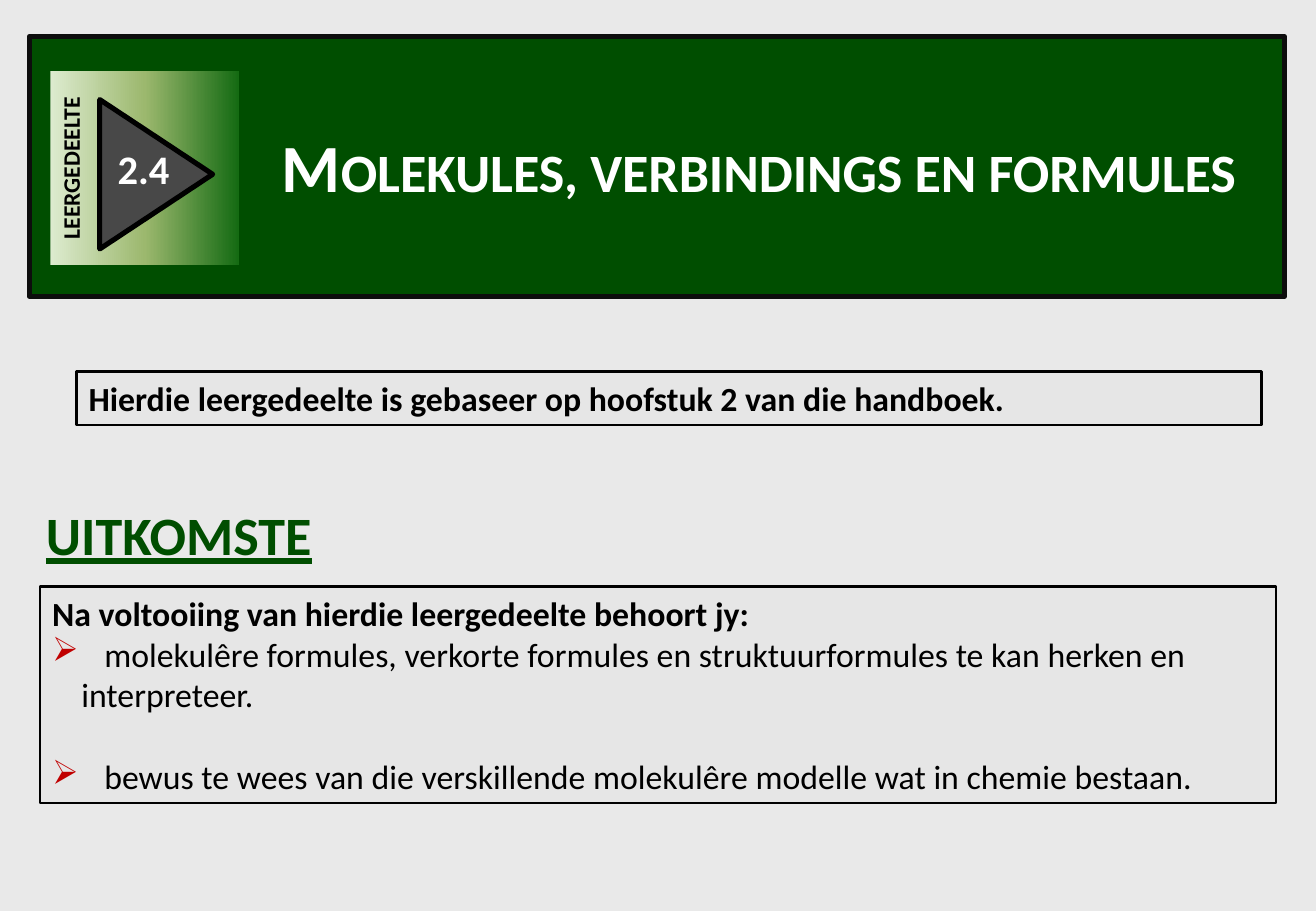
"""Build the opening slide of study section 2.4 on molecules and formulas."""
from copy import deepcopy

from lxml import etree
from pptx import Presentation
from pptx import util as u
from pptx.dml.color import RGBColor
from pptx.enum import shapes, text
from pptx.oxml.ns import qn

WIDTH, HEIGHT = u.Inches(10.83), u.Inches(7.5)
FONT = "Calibri"
BACKGROUND = RGBColor(0xE9, 0xE9, 0xE9)
PANEL = RGBColor(0xE6, 0xE6, 0xE6)
GREEN = RGBColor(0x00, 0x4E, 0x00)
BLACK = RGBColor(0x00, 0x00, 0x00)
BORDER = RGBColor(0x0D, 0x0D, 0x0D)
WHITE = RGBColor(0xFF, 0xFF, 0xFF)
GREY = RGBColor(0x48, 0x48, 0x48)
RED = RGBColor(0xC0, 0x00, 0x00)
TAG_STOPS = [
    (0, RGBColor(0xDD, 0xEB, 0xCF)),
    (0.5, RGBColor(0x9C, 0xB8, 0x6E)),
    (1, RGBColor(0x15, 0x6B, 0x13)),
]
LEFT, CENTER = text.PP_ALIGN.LEFT, text.PP_ALIGN.CENTER
TOP, MIDDLE = text.MSO_ANCHOR.TOP, text.MSO_ANCHOR.MIDDLE
INDENT, TAB_STOP = u.Inches(0.24), u.Inches(0.43)


def place(left, top, width, height):
    """Turn percentages of the slide's size into lengths."""
    return (int(WIDTH * left / 100), int(HEIGHT * top / 100),
            int(WIDTH * width / 100), int(HEIGHT * height / 100))


def add_box(slide, kind, area, fill=None, line=None, line_width=0):
    """Add a flat preset shape with an optional solid fill and outline."""
    shape = slide.shapes.add_shape(kind, *place(*area))
    shape.shadow.inherit = False
    if fill is not None:
        shape.fill.solid()
        shape.fill.fore_color.rgb = fill
    if line is None:
        shape.line.fill.background()
    else:
        shape.line.color.rgb = line
        shape.line.width = u.Pt(line_width)
    return shape


def format_paragraph(paragraph, size, color, bold=True, align=LEFT):
    """Align a paragraph and style its runs."""
    paragraph.alignment = align
    for run in paragraph.runs:
        run.font.name = FONT
        run.font.size = u.Pt(size)
        run.font.bold = bold
        run.font.color.rgb = color


def write(shape, wording, size, color, align=LEFT, anchor=TOP, wrap=True):
    """Put one styled paragraph into a shape."""
    frame = shape.text_frame
    frame.word_wrap = wrap
    frame.auto_size = text.MSO_AUTO_SIZE.NONE
    frame.vertical_anchor = anchor
    frame.text = wording
    format_paragraph(frame.paragraphs[0], size, color, align=align)
    return frame


def add_label(slide, area, wording, size, color, wrap=True):
    """Add a text box with one styled paragraph."""
    label = slide.shapes.add_textbox(*place(*area))
    return write(label, wording, size, color, wrap=wrap)


def add_panel(slide, area, wording):
    """Add an outlined panel opening with a bold line."""
    panel = add_box(slide, shapes.MSO_SHAPE.RECTANGLE, area, PANEL, BLACK, 1.5)
    return write(panel, wording, 20, BLACK, anchor=MIDDLE)


def add_bullet(frame, wording, space_before=0):
    """Append an arrow-bulleted paragraph with a hanging indent."""
    paragraph = frame.add_paragraph()
    paragraph.text = "\t" + wording
    format_paragraph(paragraph, 20, BLACK, bold=False)
    paragraph.space_before = u.Pt(space_before)
    properties = paragraph._p.get_or_add_pPr()
    properties.set("marL", str(INDENT))
    properties.set("indent", str(-INDENT))
    bullet_color = etree.SubElement(properties, qn("a:buClr"))
    etree.SubElement(bullet_color, qn("a:srgbClr"), val=str(RED))
    etree.SubElement(properties, qn("a:buChar"), char="➢")
    tabs = etree.SubElement(properties, qn("a:tabLst"))
    etree.SubElement(tabs, qn("a:tab"), pos=str(TAB_STOP), algn="l")


def add_banner(slide):
    """Add the green banner and lay the slide title over it."""
    banner = add_box(slide, shapes.MSO_SHAPE.RECTANGLE,
                     (2.22, 4, 95.38, 28.53), GREEN, BORDER, 3)
    title = slide.shapes.title
    title.left, title.top, title.width, title.height = place(
        19.21, 13.07, 76.92, 10.27)
    frame = write(title, "Molekules, verbindings en formules", 40, WHITE,
                  align=CENTER, anchor=MIDDLE)
    frame.paragraphs[0].runs[0]._r.get_or_add_rPr().set("cap", "small")
    banner.element.addnext(title.element)


def add_section_tag(slide):
    """Add the gradient tag with the section number in an arrowhead."""
    tag = add_box(slide, shapes.MSO_SHAPE.RECTANGLE, (3.6, 8.13, 14.77, 20.67))
    tag.rotation = 270
    tag.fill.gradient()
    tag.fill.gradient_angle = 270
    stop_list = tag.element.spPr.find(".//" + qn("a:gsLst"))
    stop_list.insert(1, deepcopy(stop_list[0]))
    for stop, (position, color) in zip(tag.fill.gradient_stops, TAG_STOPS):
        stop.position = position
        stop.color.rgb = color
    write(tag, "LEERGEDEELTE", 14, BLACK, align=CENTER)
    arrowhead = add_box(slide, shapes.MSO_SHAPE.ISOSCELES_TRIANGLE,
                        (6.19, 12.93, 11.36, 12.4), GREY, BLACK, 3)
    arrowhead.rotation = 90
    add_label(slide, (8.03, 15.2, 5.82, 6.8), "2.4", 24, WHITE, wrap=False)


def add_outcomes(slide):
    """Add the outcomes heading and the panel that lists them."""
    heading = add_label(slide, (2.59, 54.4, 26.69, 8.53), "UITKOMSTE", 32, GREEN)
    heading.paragraphs[0].runs[0].font.underline = True
    frame = add_panel(slide, (3.05, 64.4, 93.91, 23.73),
                      "Na voltooiing van hierdie leergedeelte behoort jy:")
    add_bullet(frame, "molekulêre formules, verkorte formules en "
                      "struktuurformules te kan herken en interpreteer.")
    add_bullet(frame, "bewus te wees van die verskillende molekulêre modelle "
                      "wat in chemie bestaan.", space_before=24.4)


def main():
    """Build and save the presentation."""
    presentation = Presentation()
    presentation.slide_width, presentation.slide_height = WIDTH, HEIGHT
    slide = presentation.slides.add_slide(presentation.slide_layouts[5])
    slide.background.fill.solid()
    slide.background.fill.fore_color.rgb = BACKGROUND
    add_banner(slide)
    add_section_tag(slide)
    add_outcomes(slide)
    add_panel(slide, (5.82, 40.8, 90.03, 5.87),
              "Hierdie leergedeelte is gebaseer op hoofstuk 2 van die handboek.")
    presentation.save("out.pptx")


if __name__ == "__main__":
    main()
